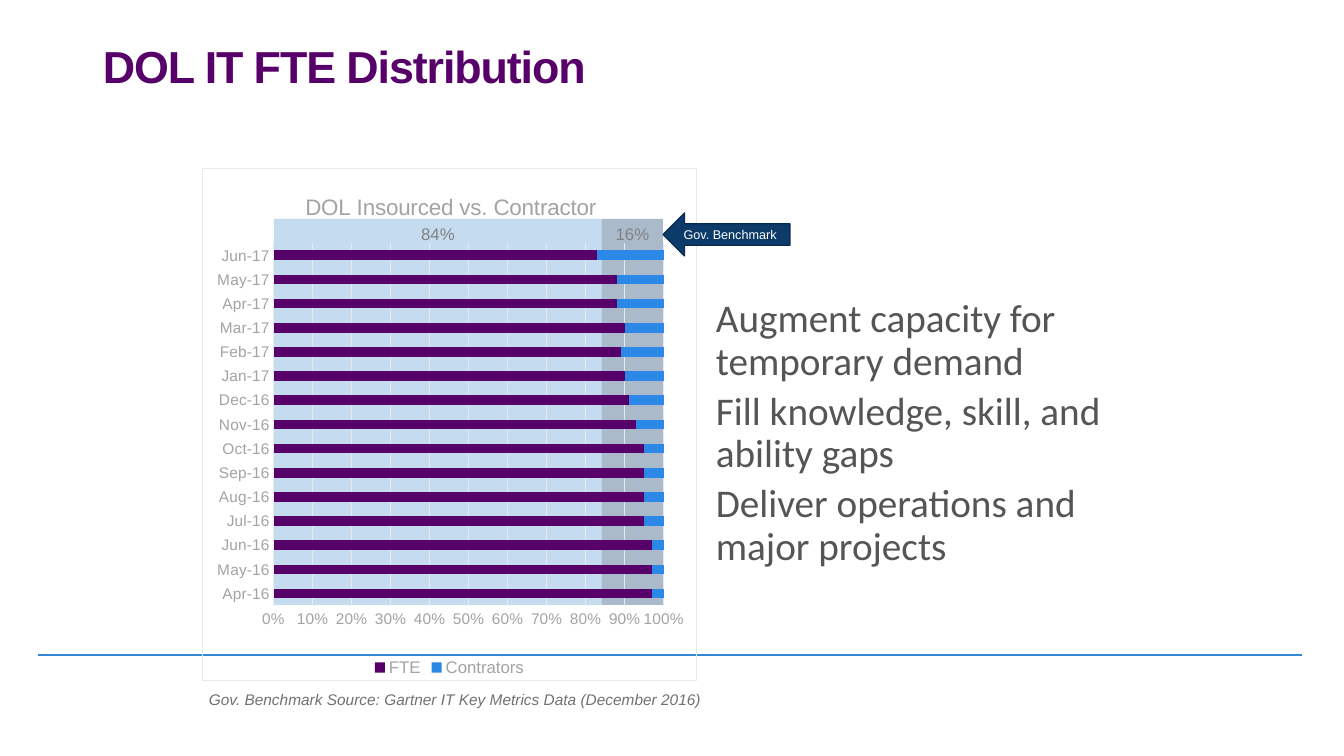
import pptx
import pptx.chart.data
import pptx.dml.color
import pptx.enum.chart
import pptx.enum.shapes
import pptx.enum.text
import pptx.oxml
import pptx.oxml.ns
import pptx.util
from lxml import etree

PX = 914400 / 100.8  # EMU in one px
SHAPES = pptx.enum.shapes.MSO_SHAPE
GREY, PALE, PURPLE, NAVY = "A3A2A4", "EAE9EA", "580069", "0C3A69"
CHART_NS = pptx.oxml.ns.nsdecls("c", "a")


def color(value):
    return pptx.dml.color.RGBColor.from_string(value)


def style(font, size, value, name="Arial"):
    font.size = pptx.util.Pt(size)
    font.name = name
    font.color.rgb = color(value)


presentation = pptx.Presentation()
presentation.slide_width = round(1344 * PX)
presentation.slide_height = round(756 * PX)
slide = presentation.slides.add_slide(presentation.slide_layouts[6])
shapes = slide.shapes

# Footer rule
rule = shapes.add_connector(pptx.enum.shapes.MSO_CONNECTOR.STRAIGHT,
                            *[round(v * PX) for v in (38, 655, 1302, 655)])
rule.line.color.rgb = color("3388D5")
rule.line.width = pptx.util.Pt(1.5)
etree.SubElement(rule._element.spPr, pptx.oxml.ns.qn("a:effectLst"))

# Benchmark bands behind the chart
for left, width, fill, share in ((274, 328, "5B9BD5", "84%"), (602, 61, NAVY, "16%")):
    band = shapes.add_shape(SHAPES.RECTANGLE,
                            *[round(v * PX) for v in (left, 219, width, 386)])
    band.shadow.inherit = False
    band.fill.solid()
    band.fill.fore_color.rgb = color(fill)
    fill_color = band._element.spPr.find(".//" + pptx.oxml.ns.qn("a:srgbClr"))
    etree.SubElement(fill_color, pptx.oxml.ns.qn("a:alpha"), val="35000")
    band.line.fill.background()
    band.text_frame.text = share
    band.text_frame.vertical_anchor = pptx.enum.text.MSO_ANCHOR.TOP
    paragraph = band.text_frame.paragraphs[0]
    paragraph.alignment = pptx.enum.text.PP_ALIGN.CENTER
    style(paragraph.runs[0].font, 12, "818181")

# Title, key points and source note
points = ("Augment capacity for temporary demand\nFill knowledge, skill, and ability gaps\n"
          "Deliver operations and major projects")
source = "Gov. Benchmark Source: Gartner IT Key Metrics Data (December 2016)"
text_boxes = []
for box, text, size, value, name, spacing in (
        ((93, 40, 1159, 146), "DOL IT FTE Distribution", 32, PURPLE, "Arial", 0.9),
        ((706, 294, 428, 387), points, 28, "555456", "Calibri", 0.9),
        ((199, 685, 516, 29), source, 11, "717073", "Arial", 1.0)):
    text_box = shapes.add_textbox(*[round(v * PX) for v in box])
    text_box.text_frame.word_wrap = text != source
    text_box.text_frame.text = text
    for index, paragraph in enumerate(text_box.text_frame.paragraphs):
        paragraph.line_spacing = spacing
        if index:
            paragraph.space_before = pptx.util.Pt(5.6)
        style(paragraph.runs[0].font, size, value, name)
    text_boxes.append(text_box)
title_run = text_boxes[0].text_frame.paragraphs[0].runs[0]
title_run.font.bold = True
title_run._r.get_or_add_rPr().set("spc", "-80")
text_boxes[2].text_frame.paragraphs[0].runs[0].font.italic = True

# Chart data: the contractor share is the rest of 100
staff = [97, 97, 97, 95, 95, 95, 95, 93, 91, 90, 89, 90, 88, 88, 83]
data = pptx.chart.data.CategoryChartData()
data.categories = ["Apr-16", "May-16", "Jun-16", "Jul-16", "Aug-16", "Sep-16", "Oct-16",
                   "Nov-16", "Dec-16", "Jan-17", "Feb-17", "Mar-17", "Apr-17", "May-17",
                   "Jun-17"]
data.add_series("FTE", staff)
data.add_series("Contrators", [100 - value for value in staff])
chart = shapes.add_chart(pptx.enum.chart.XL_CHART_TYPE.BAR_STACKED_100,
                         *[round(v * PX) for v in (202, 168, 495, 513)], data).chart
style(chart.font, 10, "717073")

# Chart title, legend and bars
chart.has_title = True
chart.chart_title.text_frame.text = "DOL Insourced vs. Contractor"
title_font = chart.chart_title.text_frame.paragraphs[0].runs[0].font
style(title_font, 16, GREY)
title_font.bold = False
chart.has_legend = True
chart.legend.position = pptx.enum.chart.XL_LEGEND_POSITION.BOTTOM
chart.legend.include_in_layout = False
style(chart.legend.font, 12, GREY)
plot = chart.plots[0]
plot.gap_width = 150
plot.overlap = 100
plot.vary_by_categories = False
for series, fill in zip(plot.series, (PURPLE, "2B88E7")):
    series.format.fill.solid()
    series.format.fill.fore_color.rgb = color(fill)

# Axes
category_axis, value_axis = chart.category_axis, chart.value_axis
for axis in (category_axis, value_axis):
    axis.major_tick_mark = axis.minor_tick_mark = pptx.enum.chart.XL_TICK_MARK.NONE
    style(axis.tick_labels.font, 11, GREY)
value_axis.has_major_gridlines = True
for line in (category_axis.format.line, value_axis.major_gridlines.format.line):
    line.color.rgb = color(PALE)
    line.width = pptx.util.Pt(0.75)
value_axis.format.line.fill.background()
value_axis.minimum_scale, value_axis.maximum_scale, value_axis.major_unit = 0, 1, 0.1
value_axis.tick_labels.number_format = "0%"
value_axis.tick_labels.number_format_is_linked = False

# Fixed places for title and plot, clear background, thin border
chart_element = chart._chartSpace.chart
plot_area = chart_element.plotArea
title_element = chart_element.find(pptx.oxml.ns.qn("c:title"))
for parent, position, settings in (
        (title_element, 1, (("xMode", "edge"), ("yMode", "edge"), ("x", 0.2), ("y", 0.04))),
        (plot_area, 0, (("layoutTarget", "inner"), ("xMode", "edge"), ("yMode", "edge"),
                        ("x", 0.144), ("y", 0.146), ("w", 0.79), ("h", 0.708)))):
    for old_layout in parent.findall(pptx.oxml.ns.qn("c:layout")):
        parent.remove(old_layout)
    entries = "".join(f'<c:{key} val="{value}"/>' for key, value in settings)
    parent.insert(position, pptx.oxml.parse_xml(
        f"<c:layout {CHART_NS}><c:manualLayout>{entries}</c:manualLayout></c:layout>"))
plot_area.append(pptx.oxml.parse_xml(f"<c:spPr {CHART_NS}><a:noFill/></c:spPr>"))
chart_element.addnext(pptx.oxml.parse_xml(
    f'<c:spPr {CHART_NS}><a:noFill/><a:ln w="9525"><a:solidFill>'
    f'<a:srgbClr val="{PALE}"/></a:solidFill></a:ln></c:spPr>'))

# Benchmark arrow
arrow = shapes.add_shape(SHAPES.LEFT_ARROW, *[round(v * PX) for v in (663, 213, 127, 43)])
arrow.shadow.inherit = False
arrow.fill.solid()
arrow.fill.fore_color.rgb = color(NAVY)
arrow.line.color.rgb = color("092B4E")
arrow.line.width = pptx.util.Pt(0.85)
arrow.text_frame.text = "Gov. Benchmark"
arrow.text_frame.vertical_anchor = pptx.enum.text.MSO_ANCHOR.MIDDLE
paragraph = arrow.text_frame.paragraphs[0]
paragraph.alignment = pptx.enum.text.PP_ALIGN.LEFT
style(paragraph.runs[0].font, 9, "FFFFFF")

presentation.save("out.pptx")
